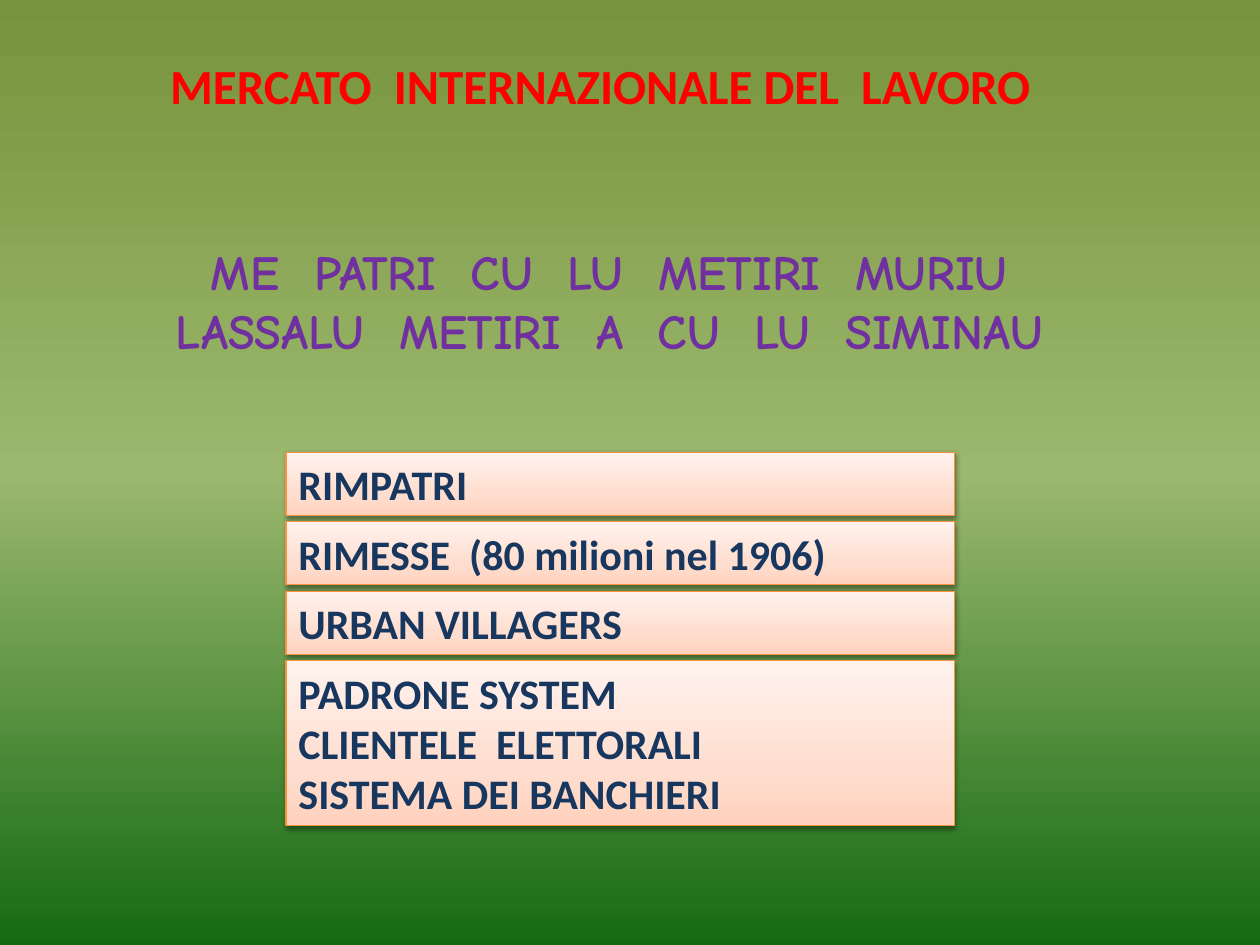
from lxml.etree import SubElement
from pptx import Presentation
from pptx.dml.color import RGBColor
from pptx.enum.shapes import MSO_SHAPE
from pptx.enum.text import MSO_ANCHOR, MSO_AUTO_SIZE, PP_ALIGN
from pptx.oxml.ns import qn
from pptx.util import Pt

RED = RGBColor(0xFF, 0x00, 0x00)
PURPLE = RGBColor(0x70, 0x30, 0xA0)
NAVY = RGBColor(0x17, 0x37, 0x5E)
ORANGE = RGBColor(0xF6, 0x92, 0x40)
BLACK = RGBColor(0x00, 0x00, 0x00)
GREENS = [(0, RGBColor(0x77, 0x93, 0x3C)), (50, RGBColor(0x9C, 0xB8, 0x6E)),
          (100, RGBColor(0x15, 0x6B, 0x13))]
PEACHES = [(0, RGBColor(0xFF, 0xD2, 0xBD)), (35, RGBColor(0xFF, 0xDE, 0xD0)),
           (100, RGBColor(0xFF, 0xF2, 0xED))]

TITLE = "MERCATO  INTERNAZIONALE DEL  LAVORO"
VERSE = ["ME  PATRI  CU  LU  METIRI  MURIU",
         "LASSALU  METIRI  A  CU  LU  SIMINAU"]
TOPICS = [["RIMPATRI"],
          ["RIMESSE  (80 milioni nel 1906)"],
          ["URBAN VILLAGERS"],
          ["PADRONE SYSTEM", "CLIENTELE  ELETTORALI", "SISTEMA DEI BANCHIERI"]]
LINE_HEIGHT, PADDING, TOPIC_GAP = 29.1, 6.9, 3.7


def set_gradient(fill, element, stops, angle):
    """Fill with colour stops; the angle runs counter-clockwise."""
    fill.gradient()
    fill.gradient_angle = angle
    stop_list = element.find(".//" + qn("a:gsLst"))
    stop_list.clear()
    for percent, color in stops:
        stop = SubElement(stop_list, qn("a:gs"), pos=str(percent * 1000))
        SubElement(stop, qn("a:srgbClr"), val=str(color))


def add_soft_shadow(shape):
    shape.shadow.inherit = False
    effects = shape.element.spPr.find(qn("a:effectLst"))
    shadow = SubElement(effects, qn("a:outerShdw"), blurRad=str(Pt(3.1)),
                        dist=str(Pt(1.6)), dir="5400000", rotWithShape="0")
    color = SubElement(shadow, qn("a:srgbClr"), val=str(BLACK))
    SubElement(color, qn("a:alpha"), val="38000")


def write_lines(shape, lines, font_name, size, color, alignment=PP_ALIGN.LEFT):
    frame = shape.text_frame
    frame.text = "\n".join(lines)
    frame.word_wrap = True
    frame.auto_size = MSO_AUTO_SIZE.SHAPE_TO_FIT_TEXT
    frame.vertical_anchor = MSO_ANCHOR.TOP
    for paragraph in frame.paragraphs:
        paragraph.alignment = alignment
        paragraph.font.name = font_name
        paragraph.font.size = Pt(size)
        paragraph.font.bold = True
        paragraph.font.color.rgb = color


def place_title(slide, left, top, width, height):
    title = slide.shapes.title
    title.left, title.top = Pt(left), Pt(top)
    title.width, title.height = Pt(width), Pt(height)
    write_lines(title, [TITLE], "Calibri", 28, RED)


def add_verse(slide, left, top, width, height):
    verse = slide.shapes.add_textbox(Pt(left), Pt(top), Pt(width), Pt(height))
    write_lines(verse, VERSE, "Comic Neue", 28, PURPLE, PP_ALIGN.CENTER)


def add_topics(slide, left, top, width):
    """Stack the topic boxes, each as tall as its lines need."""
    for lines in TOPICS:
        height = PADDING + LINE_HEIGHT * len(lines)
        box = slide.shapes.add_shape(MSO_SHAPE.RECTANGLE, Pt(left), Pt(top),
                                     Pt(width), Pt(height))
        set_gradient(box.fill, box.element, PEACHES, 90)
        box.line.color.rgb = ORANGE
        box.line.width = Pt(0.75)
        add_soft_shadow(box)
        write_lines(box, lines, "Calibri", 24, NAVY)
        top += height + TOPIC_GAP


def main():
    presentation = Presentation()
    presentation.slide_width, presentation.slide_height = Pt(720), Pt(540)
    slide = presentation.slides.add_slide(presentation.slide_layouts[5])

    # Background
    set_gradient(slide.background.fill, slide.element, GREENS, 270)
    # Title, verse and topic boxes
    place_title(slide, 90, 28, 523.5, 41)
    add_verse(slide, 84, 134.5, 528.5, 75)
    add_topics(slide, 163.5, 258.5, 382)

    presentation.save("out.pptx")


if __name__ == "__main__":
    main()
